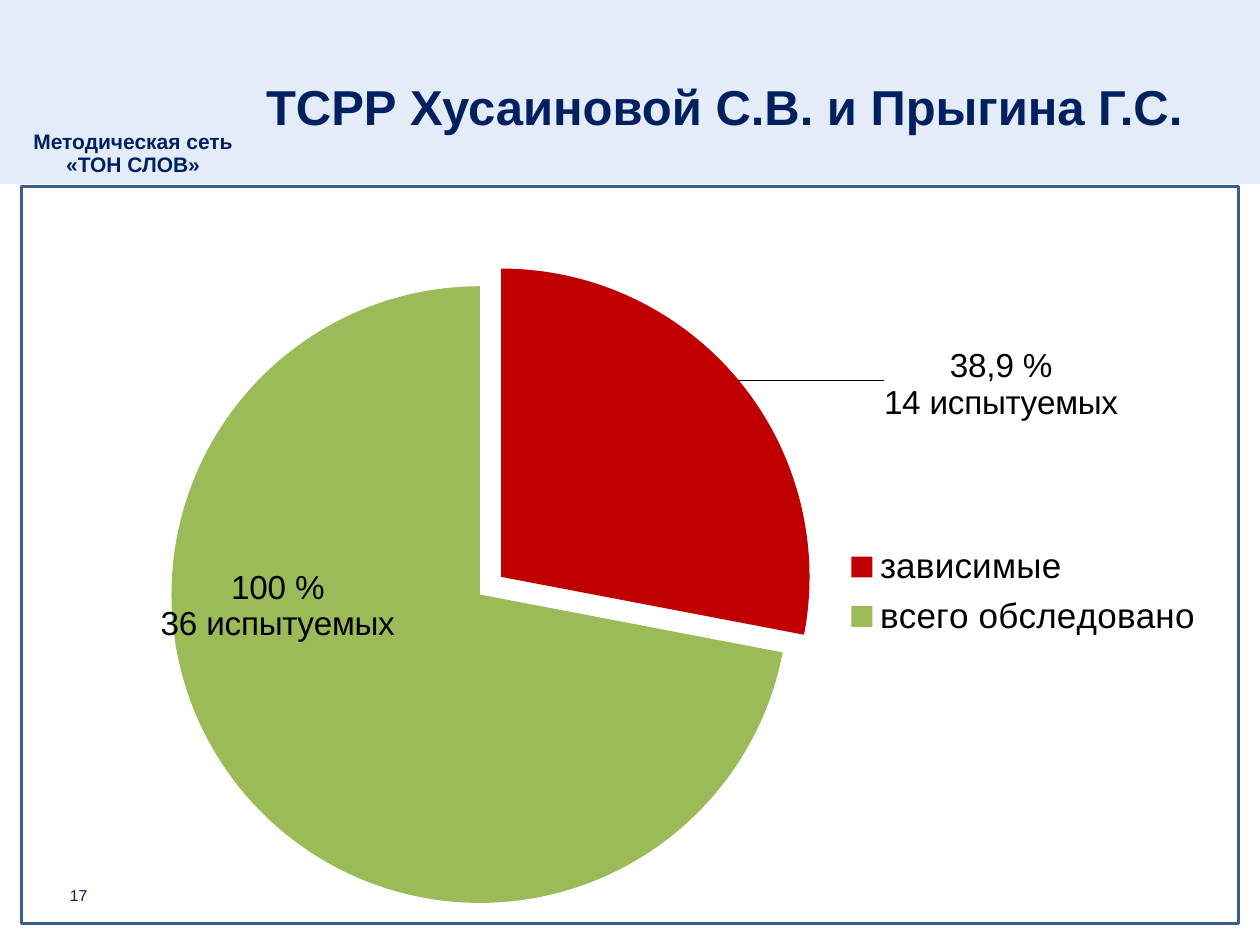
from lxml.etree import SubElement
from pptx import Presentation
from pptx.chart.data import CategoryChartData
from pptx.dml.color import RGBColor
from pptx.enum.chart import XL_CHART_TYPE, XL_LABEL_POSITION, XL_LEGEND_POSITION
from pptx.enum.shapes import MSO_SHAPE
from pptx.enum.text import MSO_ANCHOR, PP_ALIGN
from pptx.oxml import parse_xml
from pptx.oxml.ns import nsdecls, qn
from pptx.util import Cm, Pt

NAVY = RGBColor(0x00, 0x20, 0x60)
PALE_BLUE = RGBColor(0xC6, 0xD9, 0xF1)
FRAME_BLUE = RGBColor(0x3A, 0x5F, 0x8C)
RED = RGBColor(0xC0, 0x00, 0x00)
GREEN = RGBColor(0x9B, 0xBB, 0x59)
BLACK = RGBColor(0x00, 0x00, 0x00)
FONT = "Arial"

SLICES = [
    ("зависимые", 0.389, RED, "38,9 %\n14 испытуемых", (0.32, -0.13)),
    ("всего обследовано", 1, GREEN, "100 %\n36 испытуемых", (-0.07, -0.12)),
]


def style_font(font, size, color, bold=False):
    font.name = FONT
    font.size = Pt(size)
    font.bold = bold
    font.color.rgb = color


def add_rectangle(slide, left, top, width, height):
    shape = slide.shapes.add_shape(
        MSO_SHAPE.RECTANGLE, Cm(left), Cm(top), Cm(width), Cm(height))
    shape.shadow.inherit = False
    return shape


def add_header_band(slide):
    band = add_rectangle(slide, -0.1, 0, 25.55, 3.71)
    band.fill.solid()
    band.fill.fore_color.rgb = PALE_BLUE
    color = band.element.spPr.find(qn("a:solidFill"))[0]
    SubElement(color, qn("a:alpha"), val="49000")
    band.line.fill.background()


def add_frame(slide):
    frame = add_rectangle(slide, 0.43, 3.76, 24.54, 14.86)
    frame.fill.background()
    frame.line.color.rgb = FRAME_BLUE
    frame.line.width = Pt(2)


def add_text(slide, position, lines, size, alignment, anchor, spacings, bold=False):
    box = slide.shapes.add_textbox(*(Cm(value) for value in position))
    text_frame = box.text_frame
    text_frame.word_wrap = True
    text_frame.vertical_anchor = anchor
    text_frame.text = "\n".join(lines)
    for paragraph, spacing in zip(text_frame.paragraphs, spacings):
        paragraph.alignment = alignment
        paragraph.line_spacing = spacing
        style_font(paragraph.font, size, NAVY, bold)
    return box


def set_title(slide, text):
    title = slide.shapes.title
    title.left, title.top, title.width, title.height = (
        Cm(5.11), Cm(0.46), Cm(19.91), Cm(3.18))
    title.text_frame.text = text
    title.text_frame.vertical_anchor = MSO_ANCHOR.MIDDLE
    paragraph = title.text_frame.paragraphs[0]
    paragraph.alignment = PP_ALIGN.LEFT
    paragraph.line_spacing = 1.14
    paragraph.space_after = Pt(10)
    style_font(paragraph.font, 28, NAVY, True)
    title.element.getparent().append(title.element)


def make_layout(target=None, **values):
    parts = [f'<c:layoutTarget val="{target}"/>'] if target else []
    if "w" in values:
        parts += ['<c:xMode val="edge"/>', '<c:yMode val="edge"/>']
    parts += [f'<c:{name} val="{value}"/>' for name, value in values.items()]
    return parse_xml(
        f'<c:layout {nsdecls("c")}><c:manualLayout>{"".join(parts)}'
        "</c:manualLayout></c:layout>")


def replace_layout(parent, previous, layout):
    for existing in parent.findall(qn("c:layout")):
        parent.remove(existing)
    if previous is None:
        parent.insert(0, layout)
    else:
        previous.addnext(layout)


def format_slice(series, index, color, text, offset):
    point = series.points[index]
    point.format.fill.solid()
    point.format.fill.fore_color.rgb = color
    label = point.data_label
    label.text_frame.text = text
    for paragraph in label.text_frame.paragraphs:
        for run in paragraph.runs:
            style_font(run.font, 19, BLACK)
    label.position = XL_LABEL_POSITION.CENTER
    element = series.data_labels._element.findall(qn("c:dLbl"))[index]
    replace_layout(element, element.find(qn("c:idx")),
                   make_layout(x=offset[0], y=offset[1]))


def explode_first_slice(series):
    point = series._element.find(qn("c:dPt"))
    explosion = parse_xml(f'<c:explosion {nsdecls("c")} val="9"/>')
    point.find(qn("c:spPr")).addprevious(explosion)


def add_pie_chart(slide):
    data = CategoryChartData(number_format="0.0%")
    data.categories = [name for name, *_ in SLICES]
    data.add_series("Series 1", [value for _, value, *_ in SLICES])
    chart = slide.shapes.add_chart(
        XL_CHART_TYPE.PIE, Cm(0.71), Cm(3.94), Cm(24), Cm(14.66), data).chart
    style_font(chart.font, 20, BLACK)
    chart.has_title = False
    plot = chart.plots[0]
    plot.vary_by_categories = True
    series = plot.series[0]

    labels = series.data_labels
    labels.show_value = True
    labels.number_format = "0.0%"
    labels.number_format_is_linked = False
    labels.position = XL_LABEL_POSITION.CENTER
    style_font(labels.font, 19, BLACK)
    for index, (_, _, color, text, offset) in enumerate(SLICES):
        format_slice(series, index, color, text, offset)
    explode_first_slice(series)

    plot_area = chart.element.chart.plotArea
    replace_layout(plot_area, None,
                   make_layout("inner", x=0.108, y=0.125, w=0.531, h=0.848))
    chart.has_legend = True
    legend = chart.legend
    legend.position = XL_LEGEND_POSITION.RIGHT
    legend.include_in_layout = False
    style_font(legend.font, 20, BLACK)
    legend_element = legend._element
    replace_layout(legend_element, legend_element.find(qn("c:legendPos")),
                   make_layout(x=0.68, y=0.47, w=0.3, h=0.15))


def main():
    presentation = Presentation()
    presentation.slide_width = Cm(25.4)
    presentation.slide_height = Cm(19.05)
    slide = presentation.slides.add_slide(presentation.slide_layouts[5])
    add_header_band(slide)
    network = add_text(
        slide, (0.41, 2.34, 4.7, 1.35), ["Методическая сеть", "«ТОН СЛОВ»"],
        12, PP_ALIGN.CENTER, MSO_ANCHOR.BOTTOM, (1.04, 0.9), True)
    network.text_frame.margin_left = Cm(0.1)
    add_frame(slide)
    set_title(slide, "ТСРР Хусаиновой С.В. и Прыгина Г.С.")
    add_text(slide, (0.51, 17.53, 1.5, 1.02), ["17"], 9,
             PP_ALIGN.RIGHT, MSO_ANCHOR.MIDDLE, (1.0,))
    add_pie_chart(slide)
    presentation.save("out.pptx")


if __name__ == "__main__":
    main()
